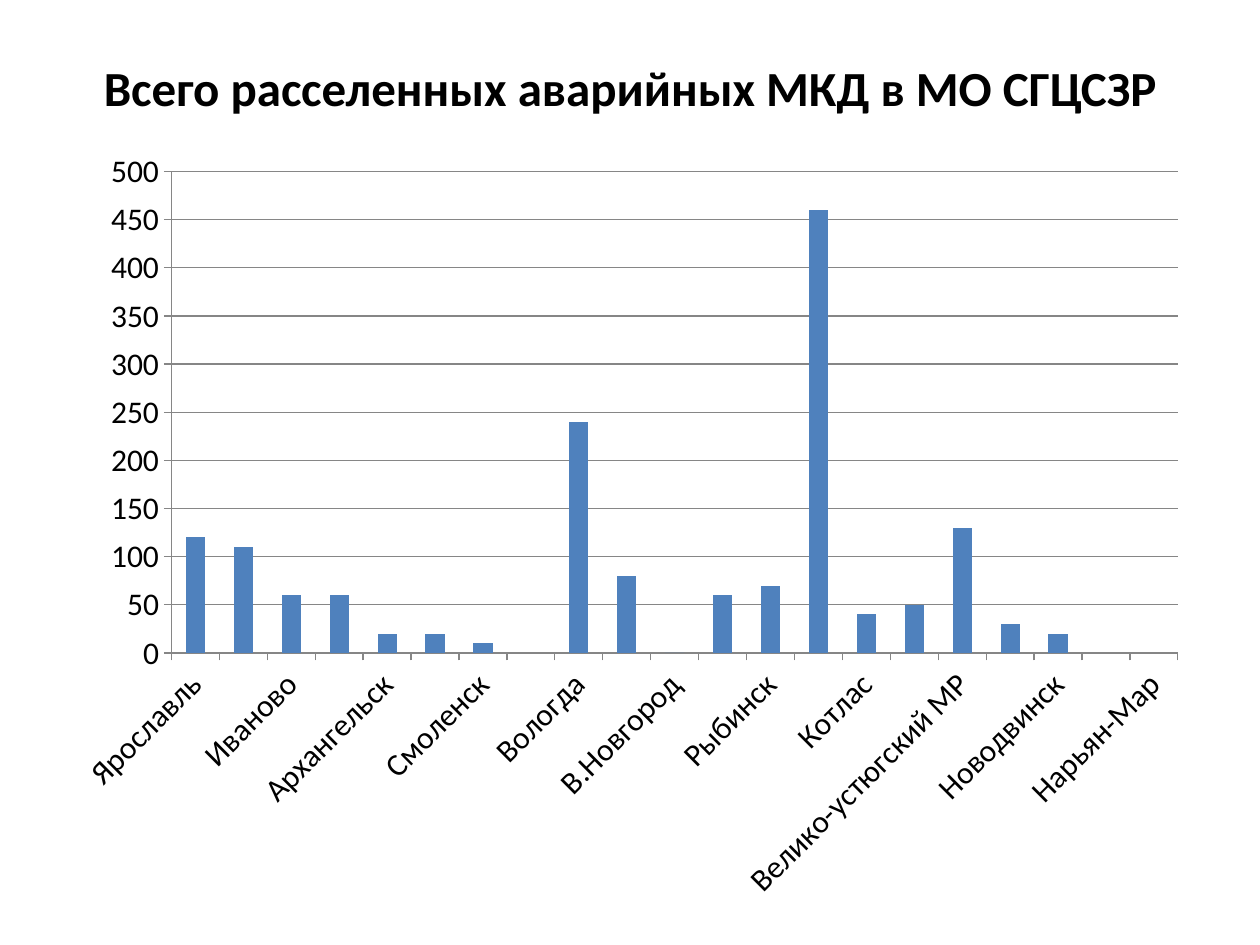
from dataclasses import dataclass

import pptx
import pptx.chart.data
import pptx.dml.color
import pptx.enum.chart
import pptx.enum.text
import pptx.util

BLACK = pptx.dml.color.RGBColor(0x00, 0x00, 0x00)
BLUE = pptx.dml.color.RGBColor(0x4F, 0x81, 0xBD)
GREY = pptx.dml.color.RGBColor(0x86, 0x86, 0x86)
WIDTH = pptx.util.Inches(10)
HEIGHT = pptx.util.Inches(7.5)
TITLE = "Всего расселенных аварийных МКД в МО СГЦСЗР"


@dataclass(frozen=True)
class Area:
    left: float
    top: float
    width: float
    height: float

    def lengths(self) -> tuple[int, int, int, int]:
        return (int(self.left * WIDTH), int(self.top * HEIGHT),
                int(self.width * WIDTH), int(self.height * HEIGHT))


@dataclass(frozen=True)
class Town:
    name: str
    houses: int | None = None


TITLE_AREA = Area(0.05, 0.04, 0.9, 1 / 6)
CHART_AREA = Area(0.047, 0.145, 0.906, 0.823)
TITLE_FONT = {"name": "Calibri", "size": pptx.util.Pt(28), "bold": True}
CHART_FONT = {"name": "Calibri", "size": pptx.util.Pt(18), "bold": False}
TOWNS = [
    Town("Ярославль", 120), Town("Калининград", 110), Town("Иваново", 60),
    Town("Тверь", 60), Town("Архангельск", 20), Town("Владимир", 20),
    Town("Смоленск", 10), Town("Череповец"), Town("Вологда", 240),
    Town("Кострома", 80), Town("В.Новгород", 0), Town("Псков", 60),
    Town("Рыбинск", 70), Town("Северодвинск", 460), Town("Котлас", 40),
    Town("Тихвинский МР", 50), Town("Велико-устюгский МР", 130),
    Town("Старая Русса", 30), Town("Новодвинск", 20), Town("Коряжма"),
    Town("Нарьян-Мар"),
]


def set_values(target, values: dict) -> None:
    for key, value in values.items():
        setattr(target, key, value)


def set_font(font, values: dict) -> None:
    set_values(font, values)
    font.color.rgb = BLACK


def draw_title(s, text: str, area: Area) -> None:
    sp = s.shapes.title
    set_values(sp, dict(zip(("left", "top", "width", "height"), area.lengths())))
    tf = sp.text_frame
    set_values(tf, {"word_wrap": True,
                    "vertical_anchor": pptx.enum.text.MSO_ANCHOR.MIDDLE})
    p = tf.paragraphs[0]
    p.alignment = pptx.enum.text.PP_ALIGN.CENTER
    set_font(p.font, TITLE_FONT)
    r = p.add_run()
    r.text = text
    set_font(r.font, TITLE_FONT)
    p.add_line_break()


def draw_chart(s, towns: list[Town], area: Area) -> None:
    data = pptx.chart.data.CategoryChartData()
    data.categories = [town.name for town in towns]
    data.add_series("Series 1", [town.houses for town in towns])
    chart = s.shapes.add_chart(
        pptx.enum.chart.XL_CHART_TYPE.COLUMN_STACKED, *area.lengths(), data).chart
    set_values(chart, {"has_legend": False, "has_title": False})
    set_font(chart.font, CHART_FONT)

    plot = chart.plots[0]
    set_values(plot, {"gap_width": 150, "overlap": 100, "vary_by_categories": False})
    fill = plot.series[0].format.fill
    fill.solid()
    fill.fore_color.rgb = BLUE

    value_axis = chart.value_axis
    set_values(value_axis, {"minimum_scale": 0, "maximum_scale": 500,
                            "major_unit": 50, "has_major_gridlines": True})
    for axis in (chart.category_axis, value_axis):
        axis.major_tick_mark = pptx.enum.chart.XL_TICK_MARK.OUTSIDE
    for part in (chart.category_axis, value_axis, value_axis.major_gridlines):
        line = part.format.line
        line.color.rgb = GREY
        line.width = pptx.util.Pt(0.75)


def main() -> None:
    prs = pptx.Presentation()
    set_values(prs, {"slide_width": WIDTH, "slide_height": HEIGHT})
    s = prs.slides.add_slide(prs.slide_layouts.get_by_name("Title Only"))
    draw_title(s, TITLE, TITLE_AREA)
    draw_chart(s, TOWNS, CHART_AREA)
    prs.save("out.pptx")


if __name__ == "__main__":
    main()
